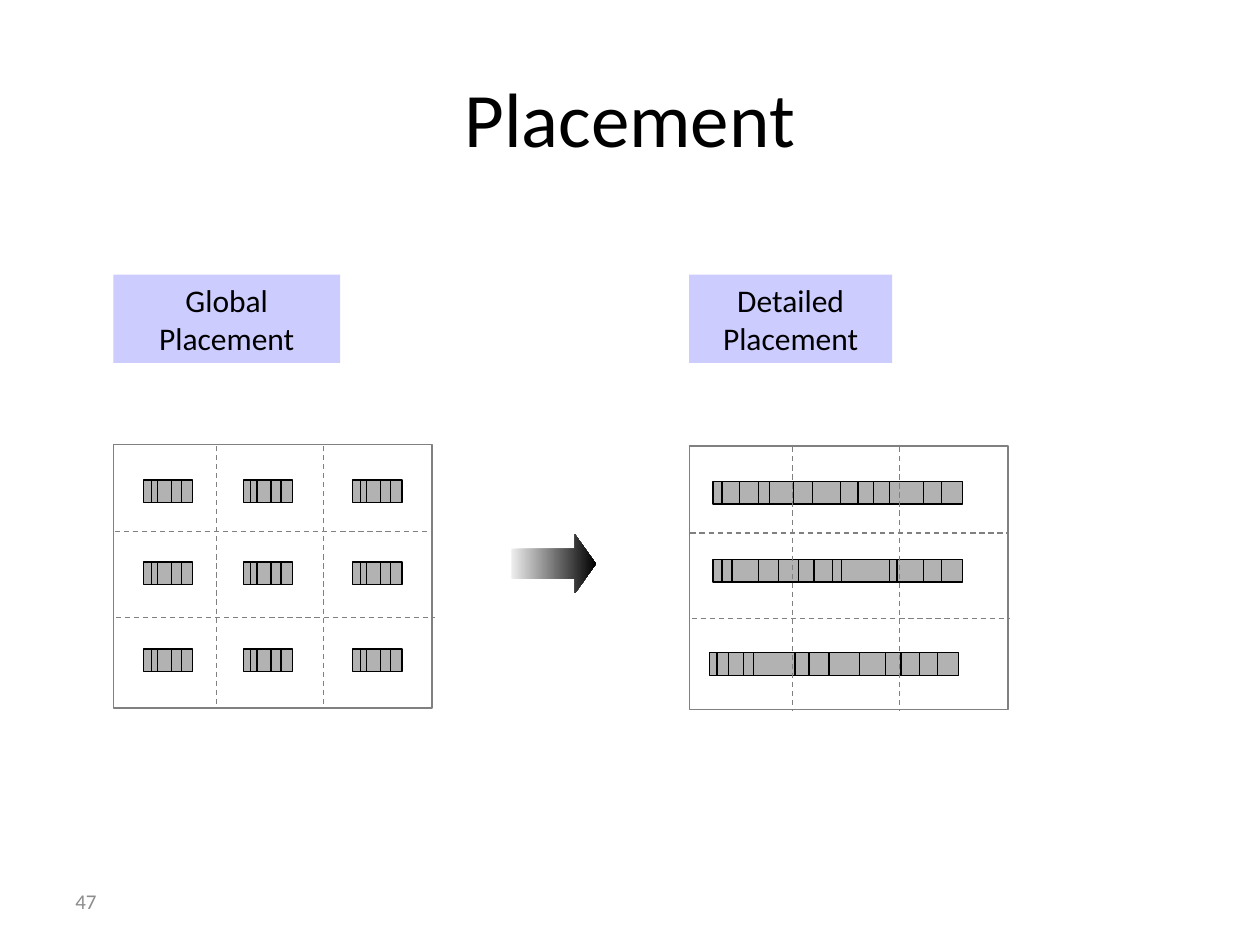
from itertools import product

from lxml import etree
from pptx import Presentation
from pptx.dml.color import RGBColor
from pptx.enum import dml, shapes, text
from pptx.oxml import ns
from pptx.util import Inches, Pt

COLORS = {"ink": "000000", "cell": "B2B2B2", "grid": "808080", "label": "CCCCFF",
          "number": "8C8C8C", "fade": "EDEDED"}
GRID_SIZE = (2.53, 2.09)
ROW_HEIGHT = 0.18
CLUSTER_WIDTH = 0.39
CLUSTER_EDGES = (0.06, 0.11, 0.22, 0.3)
STRIP_WIDTH = 1.98
STRIPS = [
    (5.66, 3.82, (0.07, 0.21, 0.36, 0.45, 0.64, 0.79, 1.01, 1.15, 1.27, 1.4, 1.67, 1.81)),
    (5.66, 4.44, (0.07, 0.15, 0.36, 0.52, 0.68, 0.8, 0.95, 1.02, 1.4, 1.46, 1.67, 1.81)),
    (5.63, 5.18, (0.06, 0.15, 0.27, 0.35, 0.68, 0.79, 0.95, 1.19, 1.4, 1.52, 1.67, 1.81)),
]


def color(name):
    return RGBColor.from_string(COLORS[name])


def set_line(line, name):
    line.color.rgb = color(name)
    line.width = Pt(0.75)


def add_block(parent, kind, box, fill=None, line=None):
    block = parent.shapes.add_shape(kind, *map(Inches, box))
    block.shadow.inherit = False
    if fill:
        block.fill.solid()
        block.fill.fore_color.rgb = color(fill)
    else:
        block.fill.background()
    if line:
        set_line(block.line, line)
    else:
        block.line.fill.background()
    return block


def add_rule(parent, start, end, name, dash=None):
    rule = parent.shapes.add_connector(shapes.MSO_CONNECTOR.STRAIGHT,
                                       *map(Inches, start + end))
    set_line(rule.line, name)
    if dash:
        rule.line.dash_style = dash
    etree.SubElement(rule._element.spPr, ns.qn("a:effectLst"))


def write(shape, words, size, name, align, anchor):
    frame = shape.text_frame
    frame.text = words
    for key, value in {"word_wrap": True, "vertical_anchor": anchor}.items():
        setattr(frame, key, value)
    para = frame.paragraphs[0]
    para.alignment = align
    font = para.runs[0].font
    for key, value in {"name": "Calibri", "size": Pt(size)}.items():
        setattr(font, key, value)
    font.color.rgb = color(name)


def add_title(page, box, words):
    title = page.shapes.title
    for key, value in zip(("left", "top", "width", "height"), box):
        setattr(title, key, Inches(value))
    write(title, words, 44, "ink", text.PP_ALIGN.CENTER, text.MSO_ANCHOR.MIDDLE)


def add_label(page, box, words):
    label = add_block(page, shapes.MSO_SHAPE.RECTANGLE, box, fill="label")
    write(label, words, 18, "ink", text.PP_ALIGN.CENTER, text.MSO_ANCHOR.TOP)


def add_cells(page, left, top, width, edges):
    """Draw a row of abutting cells, divided at the given offsets."""
    group = page.shapes.add_group_shape()
    add_block(group, shapes.MSO_SHAPE.RECTANGLE, (left, top, width, ROW_HEIGHT),
              fill="cell", line="ink")
    for edge in edges:
        add_rule(group, (left + edge, top), (left + edge, top + ROW_HEIGHT), "ink")


def add_grid(page, left, top):
    """Draw the chip outline with its three by three dashed bins."""
    width, height = GRID_SIZE
    group = page.shapes.add_group_shape()
    add_block(group, shapes.MSO_SHAPE.RECTANGLE, (left, top, width, height), line="grid")
    dash = dml.MSO_LINE.DASH
    for inset, y in ((0.01, top + 0.69), (0.02, top + 1.37)):
        add_rule(group, (left + inset, y), (left + inset + width, y), "grid", dash)
    for x in (left + 0.82, left + 1.67):
        add_rule(group, (x, top + 0.01), (x, top + 0.01 + height), "grid", dash)


def add_global_placement(page, left, top):
    add_label(page, (left, top, 1.8, 0.7), "Global Placement")
    add_grid(page, left, top + 1.35)
    for y, x in product((1.63, 2.28, 2.97), (0.24, 1.03, 1.9)):
        add_cells(page, left + x, top + y, CLUSTER_WIDTH, CLUSTER_EDGES)


def add_detailed_placement(page, left, top):
    add_label(page, (left, top, 1.61, 0.7), "Detailed Placement")
    for x, y, edges in STRIPS:
        add_cells(page, left + x - 5.47, top + y - 2.18, STRIP_WIDTH, edges)
    add_grid(page, left, top + 1.36)


def add_arrow(page, box):
    arrow = add_block(page, shapes.MSO_SHAPE.RIGHT_ARROW, box)
    arrow.adjustments[0], arrow.adjustments[1] = 0.5, 0.355
    arrow.fill.gradient()
    arrow.fill.gradient_angle = 0
    for stop, position, name in zip(arrow.fill.gradient_stops, (0, 1), ("fade", "ink")):
        stop.position = position
        stop.color.rgb = color(name)


def add_page_number(page, box, words):
    number = page.shapes.add_textbox(*map(Inches, box))
    write(number, words, 12, "number", text.PP_ALIGN.LEFT, text.MSO_ANCHOR.MIDDLE)


def main():
    deck = Presentation()
    deck.slide_width, deck.slide_height = Inches(10), Inches(7.5)
    page = deck.slides.add_slide(deck.slide_layouts.get_by_name("Title Only"))
    add_title(page, (0.5, 0.3, 9, 1.25), "Placement")
    add_global_placement(page, 0.9, 2.18)
    add_arrow(page, (4.06, 4.24, 0.67, 0.47))
    add_detailed_placement(page, 5.47, 2.18)
    add_page_number(page, (0.5, 6.95, 2.33, 0.4), "47")
    deck.save("out.pptx")


if __name__ == "__main__":
    main()
